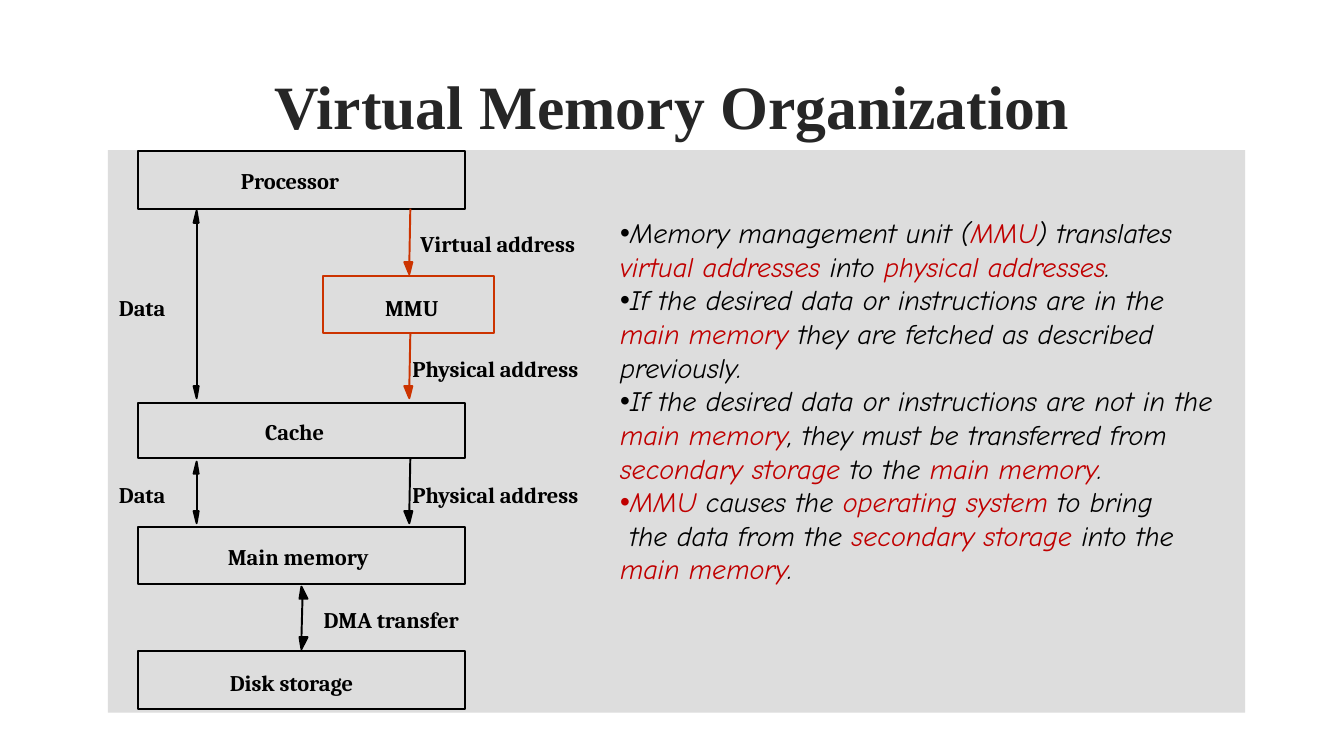
from lxml import etree
from pptx import Presentation
from pptx import util as u
from pptx.dml.color import RGBColor
from pptx.enum import shapes, text
from pptx.oxml import ns

PX = 9144  # 100 px to the inch
COLORS = {"panel": "DDDDDD", "title": "262626", "black": "000000",
          "mmu": "CC3300", "key": "C00000"}
LINE_WIDTH = u.Pt(1.38)
HEAD_LENGTH = 12

# tip x, left and right reach of the head, lean of the shaft
ADDRESS, DATA, DMA = (406, 5, 3, 1), (195, 3, 2, 0), (299, 2, 6, 1)

STAGES = [  # name, box, label left, label top, label width, colour
    ("Processor", (137, 150, 324, 57), 239, 166, 110, "black"),
    ("MMU", (320, 274, 170, 56), 382, 292, 54, "mmu"),
    ("Cache", (137, 400, 324, 54), 263, 415, 67, "black"),
    ("Main memory", (137, 523, 324, 56), 226, 539, 145, "black"),
    ("Disk storage", (137, 646, 324, 57), 228, 664, 135, "black"),
]
FLOWS = [  # name, label left, label top, label width, arrow kind, top, bottom, two-way, colour
    ("Virtual address", 417, 228, 162, ADDRESS, 207, 272, False, "mmu"),
    ("Physical address", 409, 352, 183, ADDRESS, 331, 395, False, "mmu"),
    ("Physical address", 409, 477, 183, ADDRESS, 454, 519, False, "black"),
    ("Data", 118, 292, 49, DATA, 209, 395, True, "black"),
    ("Data", 118, 477, 49, DATA, 458, 519, True, "black"),
    ("DMA transfer", 321, 601, 140, DMA, 582, 644, True, "black"),
]
NOTES = [  # bulleted, text with key terms between asterisks
    (True, "Memory management unit (*MMU*) translates"),
    (False, "*virtual addresses* into *physical addresses*."),
    (True, "If the desired data or instructions are in the *main memory *"
           "they are fetched as described previously."),
    (True, "If the desired data or instructions are not in the *main memory*, "
           "they must be transferred from *secondary storage *to the *main memory*."),
    (True, "*MMU *causes the *operating system *to bring"),
    (False, " the data from the *secondary storage *into the *main memory*."),
]


def rgb(color):
    return RGBColor.from_string(COLORS[color])


class Board:
    def __init__(self, slide):
        self.slide = slide

    def place(self, shape, left, top, width, height):
        shape.left, shape.top = left * PX, top * PX
        shape.width, shape.height = width * PX, height * PX

    def style(self, font, name, size, color, bold=False, italic=False):
        font.name, font.size = name, u.Pt(size)
        font.bold, font.italic = bold, italic
        font.color.rgb = rgb(color)

    def outline(self, shape, color):
        shape.line.color.rgb = rgb(color)
        shape.line.width = LINE_WIDTH

    def title(self, words, *area):
        title = self.slide.shapes.title
        self.place(title, *area)
        title.text_frame.text = words
        title.text_frame.vertical_anchor = text.MSO_ANCHOR.MIDDLE
        heading = title.text_frame.paragraphs[0]
        heading.alignment = text.PP_ALIGN.CENTER
        self.style(heading.runs[0].font, "Times New Roman", 44, "title", bold=True)

    def notes(self, items, *area):
        body = self.slide.placeholders[1]
        self.place(body, *area)
        frame = body.text_frame
        frame.word_wrap = True
        frame.auto_size = text.MSO_AUTO_SIZE.SHAPE_TO_FIT_TEXT
        frame.vertical_anchor = text.MSO_ANCHOR.TOP
        for index, (bulleted, words) in enumerate(items):
            paragraph = frame.add_paragraph() if index else frame.paragraphs[0]
            self.bullet(paragraph, bulleted)
            paragraph.alignment = text.PP_ALIGN.LEFT
            paragraph.space_before = u.Pt(0)
            for part, piece in enumerate(words.split("*")):
                if piece:
                    run = paragraph.add_run()
                    run.text = piece
                    self.style(run.font, "Comic Neue", 20,
                               "key" if part % 2 else "black", italic=True)

    def bullet(self, paragraph, bulleted):
        props = paragraph._p.get_or_add_pPr()
        props.set("marL", "0")
        props.set("indent", "0")
        if bulleted:
            etree.SubElement(props, ns.qn("a:buFont"), typeface="Arial")
            etree.SubElement(props, ns.qn("a:buChar"), char="•")
        else:
            etree.SubElement(props, ns.qn("a:buNone"))

    def rectangle(self, left, top, width, height):
        shape = self.slide.shapes.add_shape(
            shapes.MSO_SHAPE.RECTANGLE, left * PX, top * PX, width * PX, height * PX)
        shape.shadow.inherit = False
        return shape

    def panel(self, *area):
        """Add the grey backdrop behind everything else."""
        panel = self.rectangle(*area)
        panel.fill.solid()
        panel.fill.fore_color.rgb = rgb("panel")
        panel.line.fill.background()
        self.slide.shapes._spTree.insert(2, panel._element)

    def frame(self, color, *area):
        frame = self.rectangle(*area)
        frame.fill.background()
        self.outline(frame, color)

    def label(self, words, left, top, width):
        label = self.slide.shapes.add_textbox(left * PX, top * PX, width * PX, 27 * PX)
        frame = label.text_frame
        frame.margin_left = frame.margin_right = 0
        frame.margin_top = frame.margin_bottom = 0
        frame.word_wrap = True
        frame.text = words
        self.style(frame.paragraphs[0].runs[0].font, "Cambria", 16, "black", bold=True)

    def head(self, x, left, right, tip, base, color):
        builder = self.slide.shapes.build_freeform(x - left, base, scale=PX)
        builder.add_line_segments([(x, tip), (x + right, base)], close=True)
        head = builder.convert_to_shape()
        head.shadow.inherit = False
        head.fill.solid()
        head.fill.fore_color.rgb = rgb(color)
        self.outline(head, color)

    def arrow(self, kind, top, bottom, two_way, color):
        x, left, right, lean = kind
        start, end = top, bottom - HEAD_LENGTH
        self.head(x, left, right, bottom, end, color)
        if two_way:
            start = top + HEAD_LENGTH
            self.head(x, left, right, top, start, color)
        shaft = self.slide.shapes.add_connector(
            shapes.MSO_CONNECTOR.STRAIGHT, x * PX, end * PX, (x + lean) * PX, start * PX)
        self.outline(shaft, color)
        etree.SubElement(shaft._element.spPr, ns.qn("a:effectLst"))


def main():
    deck = Presentation()
    deck.slide_width, deck.slide_height = 1333 * PX, 750 * PX
    board = Board(deck.slides.add_slide(deck.slide_layouts[1]))
    board.panel(107, 149, 1128, 558)
    board.title("Virtual Memory Organization", 142, 33, 1050, 143)
    for name, box, left, top, width, color in STAGES:
        board.frame(color, *box)
        board.label(name, left, top, width)
    for name, left, top, width, *route in FLOWS:
        board.arrow(*route)
        board.label(name, left, top, width)
    board.notes(NOTES, 605, 209, 617, 380)
    deck.save("out.pptx")


if __name__ == "__main__":
    main()
